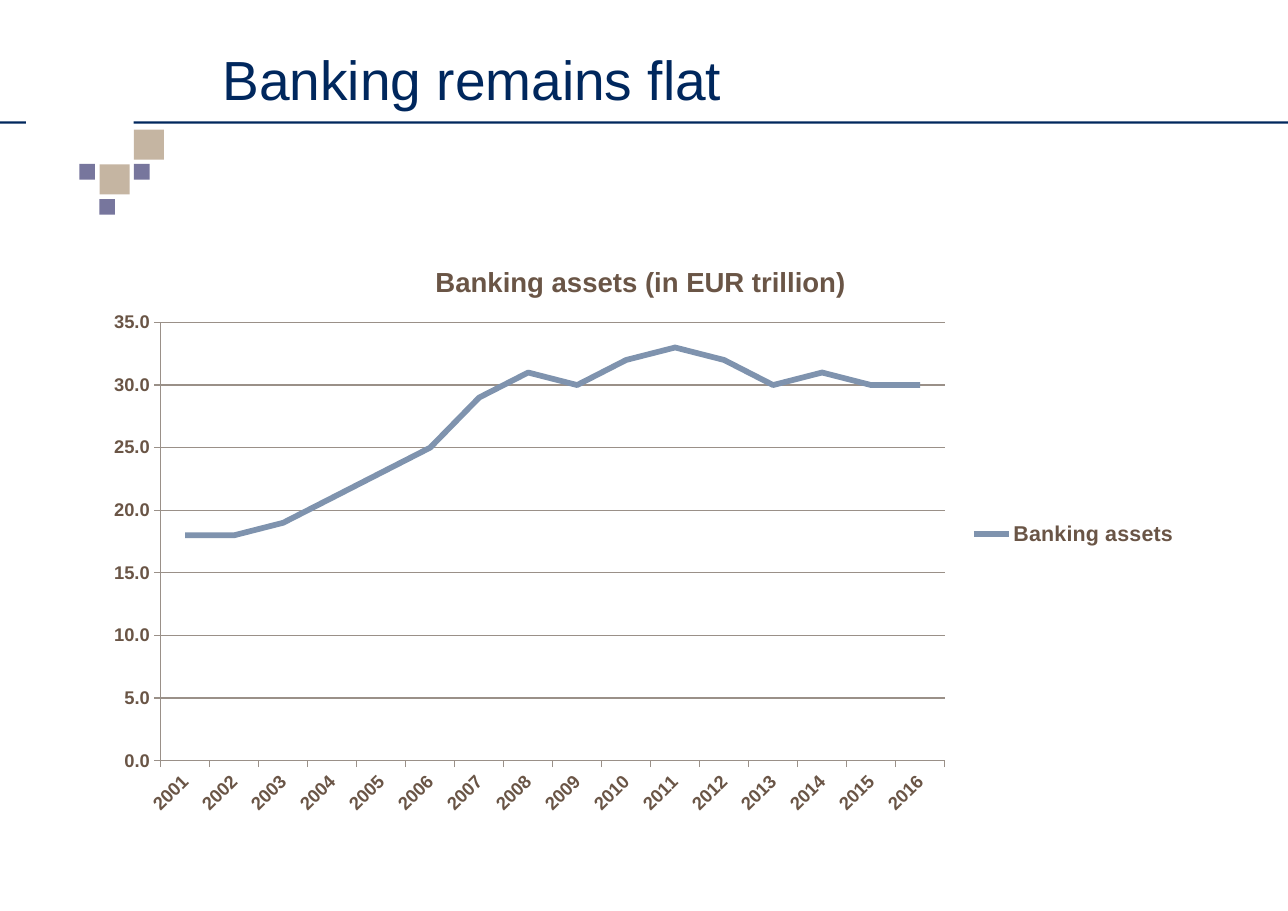
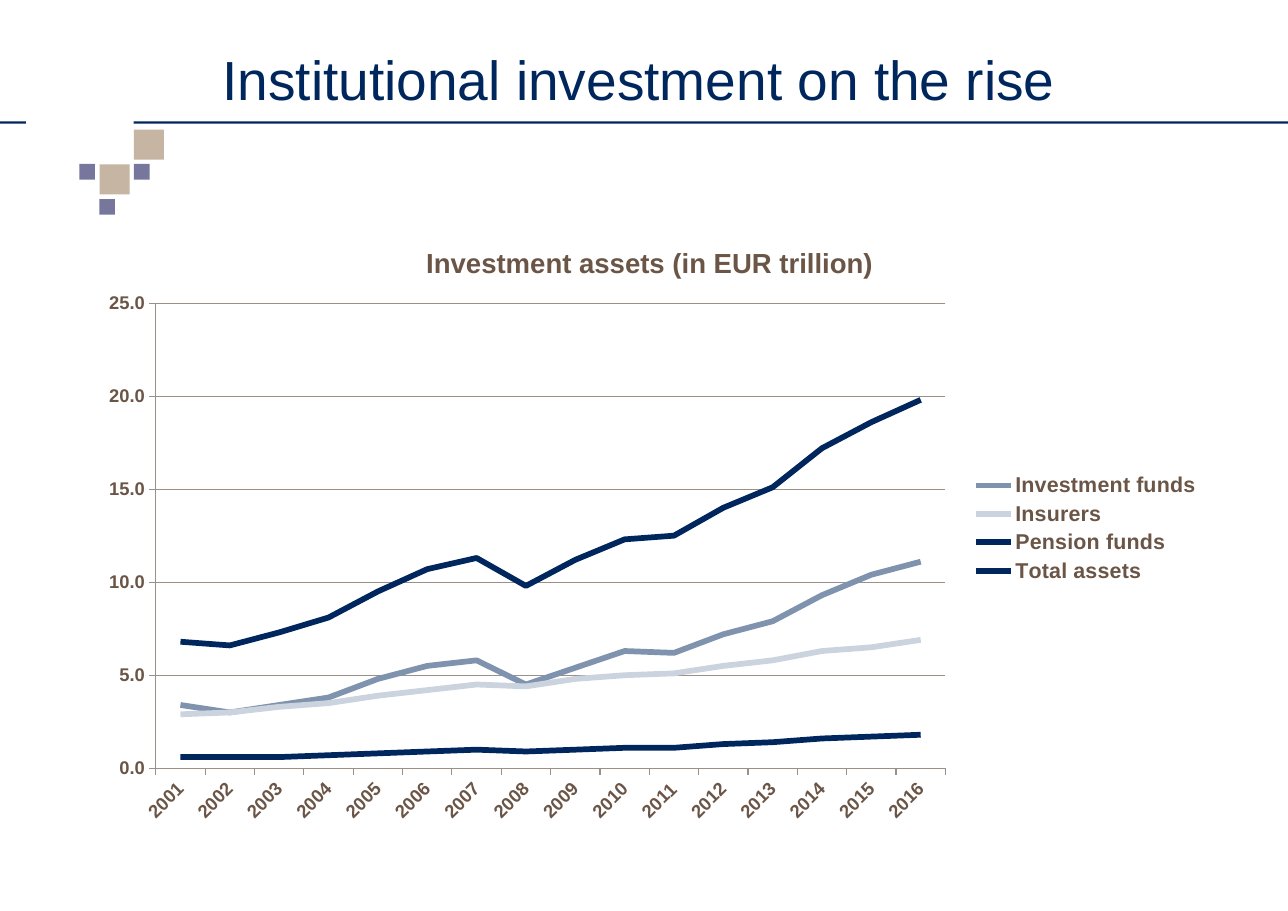
from lxml.etree import SubElement
from pptx import Presentation
from pptx.chart.data import CategoryChartData
from pptx.dml.color import RGBColor
from pptx.enum.chart import XL_CHART_TYPE, XL_LEGEND_POSITION, XL_TICK_MARK
from pptx.enum.shapes import MSO_SHAPE
from pptx.enum.text import MSO_ANCHOR, MSO_AUTO_SIZE, PP_ALIGN
from pptx.oxml.ns import qn
from pptx.util import Cm, Pt

NAVY, STEEL, PALE = "00275D", "7F93AE", "CBD3DE"
VIOLET, SAND, BROWN, GRID = "77769D", "C5B5A2", "6A5546", "9A9088"
FONT = "Arial"
SMALL, LARGE = 0.36, 0.69

# Left, top, width, height in centimetres, then colour
DECORATION = [
    (0, 2.8, 0.6, 0.05, NAVY),
    (3.08, 2.8, 26.62, 0.05, NAVY),
    (1.83, 3.78, SMALL, SMALL, VIOLET),
    (3.09, 2.99, LARGE, LARGE, SAND),
    (2.3, 3.79, LARGE, LARGE, SAND),
    (2.29, 4.59, SMALL, SMALL, VIOLET),
    (3.09, 3.78, SMALL, SMALL, VIOLET),
]
TITLE_BOX = (5.13, 0.79, 23.32, 1.78)
YEARS = [str(year) for year in range(2001, 2017)]

# "plot" is the inner plot area as fractions of the chart
SLIDES = [
    {
        "title": "Banking remains flat",
        "chart_title": "Banking assets (in EUR trillion)",
        "box": (2.11, 5.56, 25.32, 13.49),
        "plot": (0.063, 0.139, 0.714, 0.749),
        "axis_max": 35,
        "series": [
            ("Banking assets", STEEL,
             [18, 18, 19, 21, 23, 25, 29, 31, 30, 32, 33, 32, 30, 31, 30, 30]),
        ],
    },
    {
        "title": "Institutional investment on the rise",
        "chart_title": "Investment assets (in EUR trillion)",
        "box": (2.01, 5.11, 25.94, 14.13),
        "plot": (0.061, 0.133, 0.702, 0.759),
        "axis_max": 25,
        "series": [
            ("Investment funds", STEEL,
             [3.4, 3, 3.4, 3.8, 4.8, 5.5, 5.8, 4.5,
              5.4, 6.3, 6.2, 7.2, 7.9, 9.3, 10.4, 11.1]),
            ("Insurers", PALE,
             [2.9, 3, 3.3, 3.5, 3.9, 4.2, 4.5, 4.4,
              4.8, 5, 5.1, 5.5, 5.8, 6.3, 6.5, 6.9]),
            ("Pension funds", NAVY,
             [0.6, 0.6, 0.6, 0.7, 0.8, 0.9, 1, 0.9,
              1, 1.1, 1.1, 1.3, 1.4, 1.6, 1.7, 1.8]),
            ("Total assets", NAVY,
             [6.8, 6.6, 7.3, 8.1, 9.5, 10.7, 11.3, 9.8,
              11.2, 12.3, 12.5, 14, 15.1, 17.2, 18.6, 19.8]),
        ],
    },
]


def rgb(colour):
    return RGBColor.from_string(colour)


def style_font(font, size, colour, bold=False):
    font.name, font.size, font.bold = FONT, Pt(size), bold
    font.color.rgb = rgb(colour)


def style_line(line, colour, width):
    line.color.rgb = rgb(colour)
    line.width = Pt(width)


def decorate_layout(layout, slide):
    """Draw the rule and squares on the slide, then move them to its layout."""
    for *box, colour in DECORATION:
        block = slide.shapes.add_shape(MSO_SHAPE.RECTANGLE, *map(Cm, box))
        block.shadow.inherit = False
        block.fill.solid()
        block.fill.fore_color.rgb = rgb(colour)
        block.line.fill.background()
        layout.shapes.element.append(block.element)


def set_title(slide, wording):
    title = slide.shapes.title
    title.left, title.top, title.width, title.height = map(Cm, TITLE_BOX)
    frame = title.text_frame
    frame.text = wording
    frame.auto_size = MSO_AUTO_SIZE.NONE
    frame.vertical_anchor = MSO_ANCHOR.BOTTOM
    frame.margin_left = frame.margin_right = frame.margin_top = frame.margin_bottom = 0
    frame.paragraphs[0].alignment = PP_ALIGN.LEFT
    style_font(frame.paragraphs[0].runs[0].font, 36, NAVY)


def place_plot(chart, fractions):
    """Fix the inner plot area to the given fractions of the chart."""
    plot_area = chart.element.xpath("c:chart/c:plotArea")[0]
    for automatic in plot_area.xpath("c:layout"):
        plot_area.remove(automatic)
    layout = SubElement(plot_area, qn("c:layout"))
    plot_area.insert(0, layout)
    manual = SubElement(layout, qn("c:manualLayout"))
    settings = [("layoutTarget", "inner"), ("xMode", "edge"), ("yMode", "edge")]
    settings += zip("xywh", map(str, fractions))
    for tag, value in settings:
        SubElement(manual, qn(f"c:{tag}")).set("val", value)


def add_line_chart(slide, content):
    chart_data = CategoryChartData(number_format="0.0")
    chart_data.categories = YEARS
    for name, _, values in content["series"]:
        chart_data.add_series(name, values)
    chart = slide.shapes.add_chart(
        XL_CHART_TYPE.LINE, *map(Cm, content["box"]), chart_data).chart
    style_font(chart.font, 10, BROWN)

    heading = chart.chart_title.text_frame
    heading.text = content["chart_title"]
    style_font(heading.paragraphs[0].runs[0].font, 18, BROWN, bold=True)

    chart.has_legend = True
    chart.legend.position = XL_LEGEND_POSITION.RIGHT
    chart.legend.include_in_layout = False
    style_font(chart.legend.font, 14, BROWN, bold=True)

    for axis in (chart.category_axis, chart.value_axis):
        axis.major_tick_mark = XL_TICK_MARK.OUTSIDE
        axis.minor_tick_mark = XL_TICK_MARK.NONE
        style_line(axis.format.line, GRID, 0.75)
        style_font(axis.tick_labels.font, 12, BROWN, bold=True)
    chart.element.xpath(".//c:catAx/c:txPr/a:bodyPr")[0].set("rot", "-2700000")

    assets_axis = chart.value_axis
    assets_axis.minimum_scale = 0
    assets_axis.maximum_scale = content["axis_max"]
    assets_axis.major_unit = 5
    assets_axis.tick_labels.number_format = "0.0"
    assets_axis.tick_labels.number_format_is_linked = False
    assets_axis.has_major_gridlines = True
    style_line(assets_axis.major_gridlines.format.line, GRID, 0.75)

    chart.plots[0].vary_by_categories = False
    for series, (_, colour, _) in zip(chart.plots[0].series, content["series"]):
        series.smooth = False
        style_line(series.format.line, colour, 3.75)
    place_plot(chart, content["plot"])


def main():
    deck = Presentation()
    deck.slide_width, deck.slide_height = Cm(29.7), Cm(21)
    title_only = deck.slide_layouts[5]
    for number, content in enumerate(SLIDES):
        slide = deck.slides.add_slide(title_only)
        if number == 0:
            decorate_layout(title_only, slide)
        add_line_chart(slide, content)
        set_title(slide, content["title"])
    deck.save("out.pptx")


if __name__ == "__main__":
    main()
